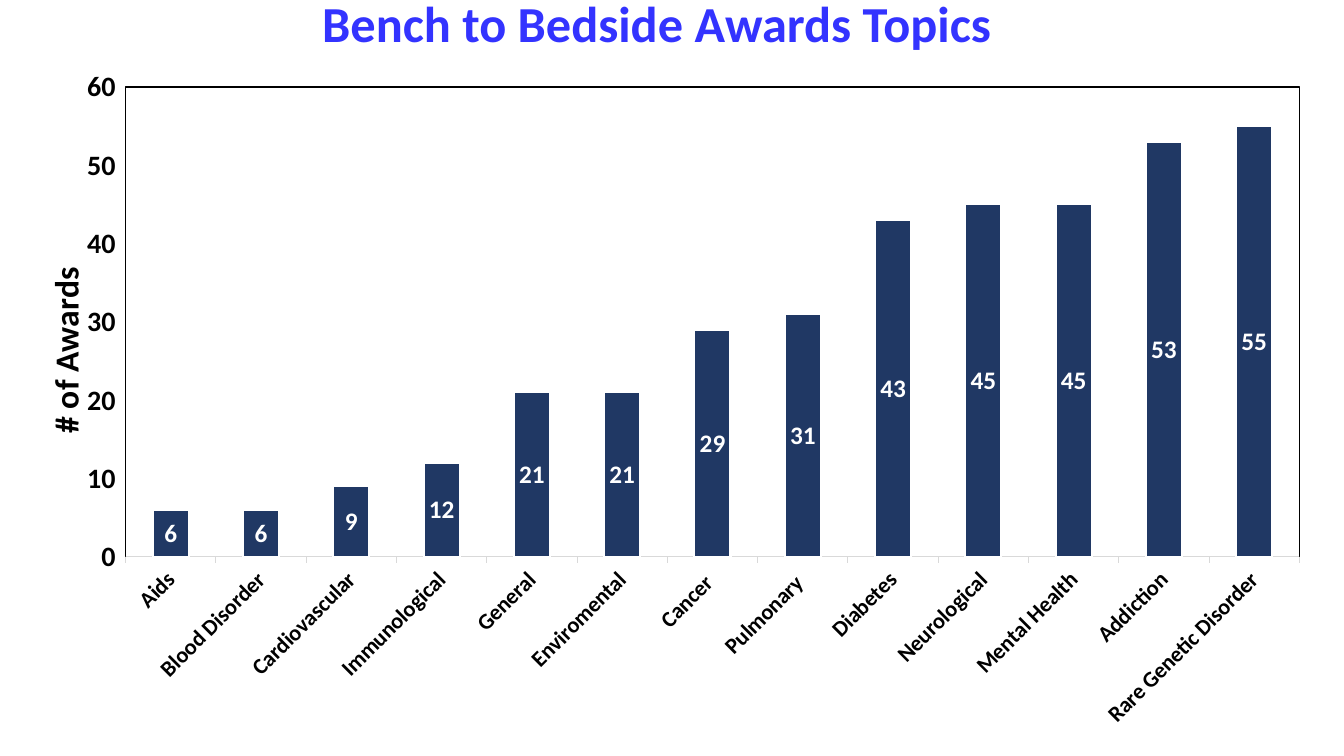
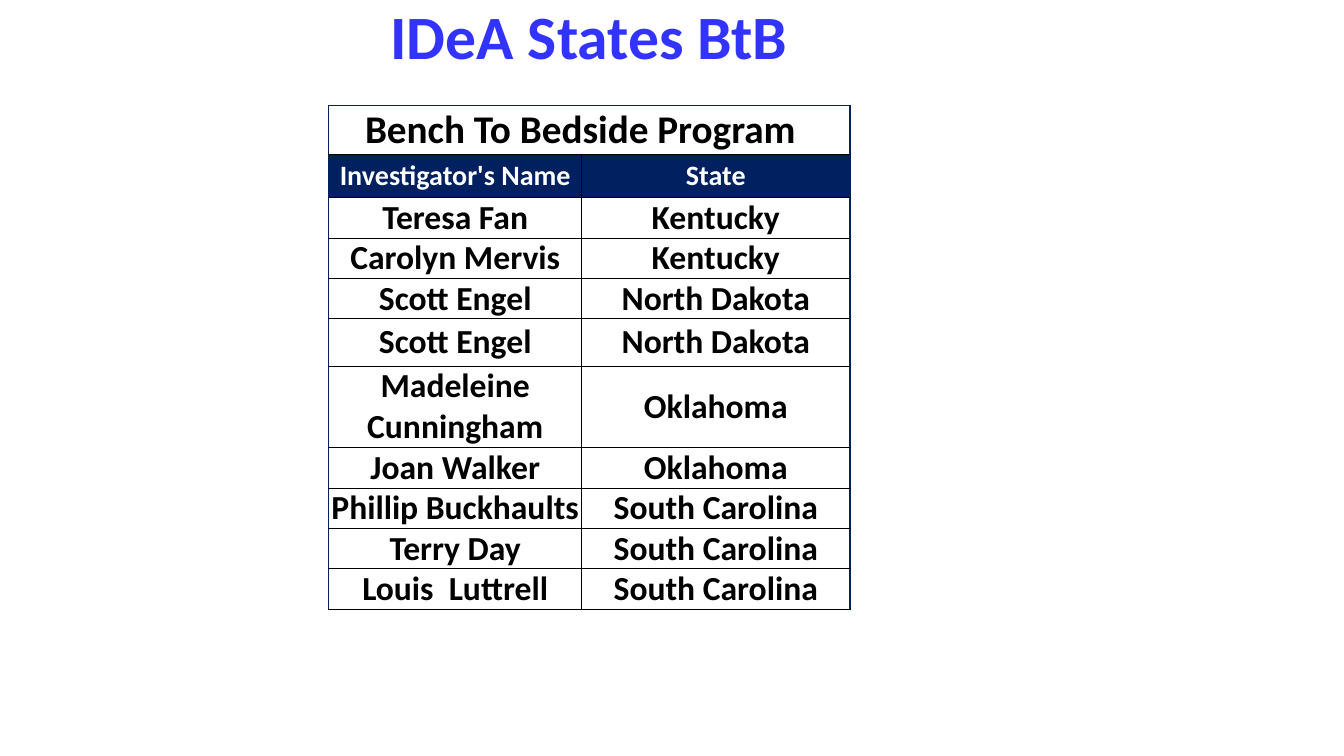
from dataclasses import dataclass

from lxml.etree import SubElement as Sub
from pptx import Presentation
from pptx.chart.data import CategoryChartData as Data
from pptx.dml.color import RGBColor as RGB
from pptx.enum.chart import XL_CHART_TYPE as Kind
from pptx.enum.chart import XL_LABEL_POSITION as Spot
from pptx.enum.chart import XL_TICK_MARK as Tick
from pptx.enum.text import MSO_ANCHOR as Anchor
from pptx.enum.text import PP_ALIGN as Align
from pptx.oxml import parse_xml as to_xml
from pptx.oxml.ns import qn
from pptx.util import Pt

PX = 9144  # 100 px to the inch


@dataclass(frozen=True)
class Theme:
    face: str = "Calibri"
    title: str = "3333FF"
    ink: str = "000000"
    paper: str = "FFFFFF"
    navy: str = "002060"
    bar: str = "203864"
    rule: str = "D9D9D9"
    small: int = 16
    label: int = 18
    mid: int = 20
    body: int = 24
    head: int = 28
    top: int = 36
    big: int = 44


T = Theme()

TOPICS = {
    "Aids": 6, "Blood Disorder": 6, "Cardiovascular": 9,
    "Immunological": 12, "General": 21, "Enviromental": 21,
    "Cancer ": 29, "Pulmonary ": 31, "Diabetes": 43,
    "Neurological": 45, "Mental Health": 45, "Addiction": 53,
    "Rare Genetic Disorder": 55,
}

PEOPLE = [
    ("Teresa Fan", "Kentucky", 40),
    ("Carolyn Mervis", "Kentucky", 40),
    ("Scott Engel", "North Dakota", 40),
    ("Scott Engel", "North Dakota", 47),
    ("Madeleine Cunningham", "Oklahoma", 81),
    ("Joan Walker", "Oklahoma", 40),
    ("Phillip Buckhaults", "South Carolina", 40),
    ("Terry Day", "South Carolina", 40),
    ("Louis  Luttrell", "South Carolina", 40),
]


def emu(*vals):
    return [val * PX for val in vals]


def style(font, size, color=T.ink):
    font.name, font.size, font.bold = T.face, Pt(size), True
    font.color.rgb = RGB.from_string(color)


def text(frame, words, size=T.body, color=T.ink, space=None):
    para = frame.paragraphs[0]
    para.alignment = Align.CENTER
    if space:
        para.line_spacing = space
    run = para.add_run()
    run.text = words
    style(run.font, size, color)


def title(slide, box, words, size):
    frame = slide.shapes.add_textbox(*emu(*box)).text_frame
    frame.word_wrap = True
    frame.vertical_anchor = Anchor.MIDDLE
    frame.margin_top = frame.margin_bottom = 0
    text(frame, words, size, T.title, space=0.9)


# Chart parts
def layout(node, inner=False, **vals):
    """Fill a c:layout node with fractions of the chart."""
    spot = Sub(node, qn("c:manualLayout"))
    if inner:
        Sub(spot, qn("c:layoutTarget"), val="inner")
    for key in ("x", "y"):
        Sub(spot, qn(f"c:{key}Mode"), val="edge")
    for key, val in vals.items():
        Sub(spot, qn(f"c:{key}"), val=str(val))


def frame_plot(chart):
    plot = chart.element.find(".//" + qn("c:plotArea"))
    for old in plot.findall(qn("c:layout")):
        plot.remove(old)
    node = plot.makeelement(qn("c:layout"))
    plot.insert(0, node)
    layout(node, inner=True, x=0.088, y=0.053, w=0.901, h=0.665)
    line = Sub(Sub(plot, qn("c:spPr")), qn("a:ln"), w=str(Pt(1)))
    Sub(Sub(line, qn("a:solidFill")), qn("a:srgbClr"), val=T.ink)


def axes(chart):
    cat, val = chart.category_axis, chart.value_axis
    for axis, size in ((cat, T.small), (val, T.mid)):
        axis.has_major_gridlines = False
        axis.major_tick_mark = Tick.OUTSIDE
        axis.minor_tick_mark = Tick.NONE
        style(axis.tick_labels.font, size)
    cat.format.line.color.rgb = RGB.from_string(T.rule)
    cat.format.line.width = Pt(0.75)
    turn = cat.tick_labels.font
    body = chart.element.find(f".//{qn('c:catAx')}/{qn('c:txPr')}/{qn('a:bodyPr')}")
    body.set("rot", "-2700000")
    val.format.line.fill.background()
    val.minimum_scale, val.maximum_scale, val.major_unit = 0, 60, 10
    # Upright axis title
    text(val.axis_title.text_frame, "# of Awards")
    node = chart.element.find(f".//{qn('c:valAx')}/{qn('c:title')}")
    body = node.find(".//" + qn("a:bodyPr"))
    body.set("rot", "-5400000")
    body.set("vert", "horz")
    layout(node.find(qn("c:layout")), x=0.02, y=0.3)


def bars(slide, box):
    data = Data()
    data.categories = list(TOPICS)
    data.add_series("Series 1", list(TOPICS.values()))
    chart = slide.shapes.add_chart(Kind.COLUMN_CLUSTERED, *emu(*box), data).chart
    chart.has_legend = chart.has_title = False
    chart.font.name, chart.font.size = T.face, Pt(10)
    plot = chart.plots[0]
    plot.gap_width, plot.vary_by_categories = 150, False
    look = plot.series[0].format
    look.fill.solid()
    look.fill.fore_color.rgb = RGB.from_string(T.bar)
    look.line.color.rgb = RGB.from_string(T.paper)
    look.line.width = Pt(1.5)
    labels = plot.series[0].data_labels
    labels.show_value, labels.position = True, Spot.CENTER
    style(labels.font, T.label, T.paper)
    axes(chart)
    frame_plot(chart)


# Table parts
def edges(cell, outer):
    """Navy on the outer sides, thin black on the others."""
    props = cell._tc.get_or_add_tcPr()
    space = "http://schemas.openxmlformats.org/drawingml/2006/main"
    for spot, side in enumerate("LRTB"):
        color, width = (T.navy, 1) if side in outer else (T.ink, 0.5)
        props.insert(spot, to_xml(
            f'<a:ln{side} xmlns:a="{space}" w="{Pt(width)}"><a:solidFill>'
            f'<a:srgbClr val="{color}"/></a:solidFill></a:ln{side}>'))


def fill(cell, words, size=T.body, color=T.ink, back=None, outer="", right=0):
    cell.margin_left = cell.margin_top = cell.margin_bottom = 0
    cell.margin_right = right * PX
    cell.vertical_anchor = Anchor.MIDDLE
    if back:
        cell.fill.solid()
        cell.fill.fore_color.rgb = RGB.from_string(back)
    else:
        cell.fill.background()
    if words:
        text(cell.text_frame, words, size, color)
    edges(cell, outer)


def states(slide, box):
    left, top, wide = box
    highs = [48, 43] + [high for _, _, high in PEOPLE]
    table = slide.shapes.add_table(
        len(highs), 2, *emu(left, top, wide, sum(highs))).table
    table.first_row = table.horz_banding = False
    first = 251
    for col, width in zip(table.columns, (first, wide - first)):
        col.width = width * PX
    for row, high in zip(table.rows, highs):
        row.height = high * PX
    # Heading across both columns
    table.cell(0, 0).merge(table.cell(0, 1))
    fill(table.cell(0, 0), "Bench To Bedside Program", T.head, outer="LRT", right=18)
    table.cell(0, 0).vertical_anchor = Anchor.BOTTOM
    fill(table.cell(0, 1), "", outer="LRT")
    # Column names, then people
    names = ("Investigator's Name", "State")
    for col, side in enumerate("LR"):
        fill(table.cell(1, col), names[col], T.mid, T.paper, T.navy, side)
        for row, person in enumerate(PEOPLE, 2):
            fill(table.cell(row, col), person[col], outer=side)


def main():
    deck = Presentation()
    deck.slide_width, deck.slide_height = emu(1333, 750)
    blank = deck.slide_layouts[6]

    slide = deck.slides.add_slide(blank)
    title(slide, (125, 0, 1053, 53), "Bench to Bedside Awards Topics", T.top)
    bars(slide, (11, 49, 1292, 701))

    slide = deck.slides.add_slide(blank)
    title(slide, (326, 0, 517, 78), "IDeA States BtB", T.big)
    states(slide, (326, 105, 517))

    deck.save("out.pptx")


if __name__ == "__main__":
    main()
